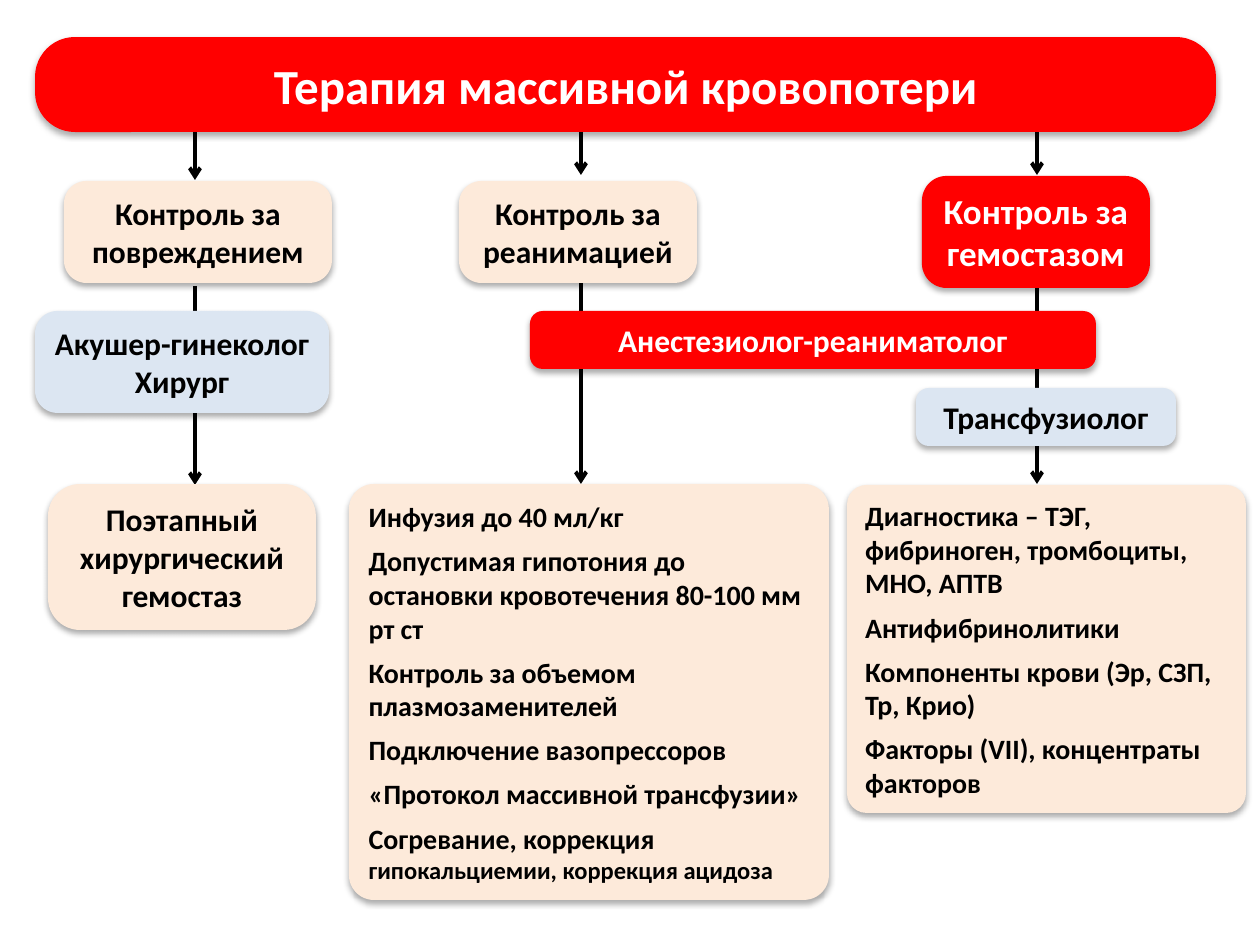
from pptx import Presentation
from pptx.dml.color import RGBColor
from pptx.enum.shapes import MSO_CONNECTOR as Link, MSO_SHAPE as Kind
from pptx.enum.text import MSO_ANCHOR as Anchor, MSO_AUTO_SIZE as Fit, PP_ALIGN as Align
from pptx.oxml import parse_xml
from pptx.oxml.ns import nsdecls
from pptx.util import Emu, Pt

PX = 914400 // 126
RED, CREAM, BLUE = "FF0000", "FDEADA", "DCE6F2"
BLACK, WHITE = "000000", "FFFFFF"

ARROWS = [
    (1037, 275, 484), (581, 267, 484), (195, 286, 485),
    (195, 116, 180), (581, 126, 175), (1037, 115, 175),
]

BOXES = [
    ((35, 37, 1181, 95), RED, 0.42, ["Терапия массивной кровопотери"], dict(size=28, color=WHITE)),
    ((64, 181, 268, 102), CREAM, 0.22, ["Контроль за повреждением"], {}),
    ((459, 181, 238, 102), CREAM, 0.22, ["Контроль за реанимацией"], {}),
    ((922, 176, 228, 112), RED, 0.22, ["Контроль за гемостазом"], dict(size=20, color=WHITE)),
    ((48, 484, 268, 146), CREAM, 0.22, ["Поэтапный хирургический гемостаз"], {}),
    ((349, 484, 480, 416), CREAM, 0.06, [
        "Инфузия до 40 мл/кг",
        "Допустимая гипотония до остановки кровотечения 80-100 мм рт ст",
        "Контроль за объемом плазмозаменителей",
        "Подключение вазопрессоров",
        "«Протокол массивной трансфузии»",
        ("Согревание, коррекция ", "гипокальциемии, коррекция ацидоза"),
    ], dict(size=16, small=14, align=Align.LEFT, gap=6)),
    ((847, 485, 399, 328), CREAM, 0.06, [
        "Диагностика – ТЭГ, фибриноген, тромбоциты, МНО, АПТВ",
        "Антифибринолитики",
        "Компоненты крови (Эр, СЗП, Тр, Крио)",
        "Факторы (VII), концентраты факторов",
    ], dict(size=16, align=Align.LEFT, gap=6)),
    ((35, 311, 294, 102), BLUE, 0.22, ["Акушер-гинеколог", "Хирург"], {}),
    ((530, 311, 566, 58), RED, 0.22, ["Анестезиолог-реаниматолог"], dict(color=WHITE)),
    ((916, 388, 260, 58), BLUE, 0.22, ["Трансфузиолог"], {}),
]

SHADE = (
    f'<a:effectLst {nsdecls("a")}><a:outerShdw blurRad="{Pt(3.5)}" dist="{Pt(2.2)}"'
    ' dir="5400000" rotWithShape="0"><a:srgbClr val="000000"><a:alpha val="32000"/>'
    '</a:srgbClr></a:outerShdw></a:effectLst>'
)


def px(*nums):
    return [Emu(n * PX) for n in nums]


def rgb(code):
    return RGBColor.from_string(code)


def write(frame, paras, size=18, small=14, color=BLACK, align=Align.CENTER, gap=0):
    frame.word_wrap = True
    frame.auto_size = Fit.SHAPE_TO_FIT_TEXT
    frame.vertical_anchor = Anchor.MIDDLE
    for i, parts in enumerate(paras):
        para = frame.add_paragraph() if i else frame.paragraphs[0]
        para.alignment = align
        if i and gap:
            para.space_before = Pt(gap)
        parts = (parts,) if isinstance(parts, str) else parts
        for text, pts in zip(parts, (size, small)):
            run = para.add_run()
            run.text = text
            font = run.font
            font.name, font.size, font.bold = "Calibri", Pt(pts), True
            font.color.rgb = rgb(color)


def arrow(slide, x, top, end):
    line = slide.shapes.add_connector(Link.STRAIGHT, *px(x, top, x, end))
    line.line.color.rgb = rgb(BLACK)
    line.line.width = Pt(2.25)
    line.line._get_or_add_ln().append(parse_xml(f'<a:tailEnd {nsdecls("a")} type="arrow"/>'))
    line._element.spPr.append(parse_xml(f'<a:effectLst {nsdecls("a")}/>'))


def box(slide, rect, fill, curve, paras, style):
    shape = slide.shapes.add_shape(Kind.ROUNDED_RECTANGLE, *px(*rect))
    shape.adjustments[0] = curve
    shape.fill.solid()
    shape.fill.fore_color.rgb = rgb(fill)
    shape.line.fill.background()
    shape._element.spPr.append(parse_xml(SHADE))
    write(shape.text_frame, paras, **style)


def main():
    deck = Presentation()
    deck.slide_width, deck.slide_height = px(1260, 945)
    slide = deck.slides.add_slide(deck.slide_layouts[6])
    for item in ARROWS:
        arrow(slide, *item)
    for item in BOXES:
        box(slide, *item)
    deck.save("out.pptx")


if __name__ == "__main__":
    main()
